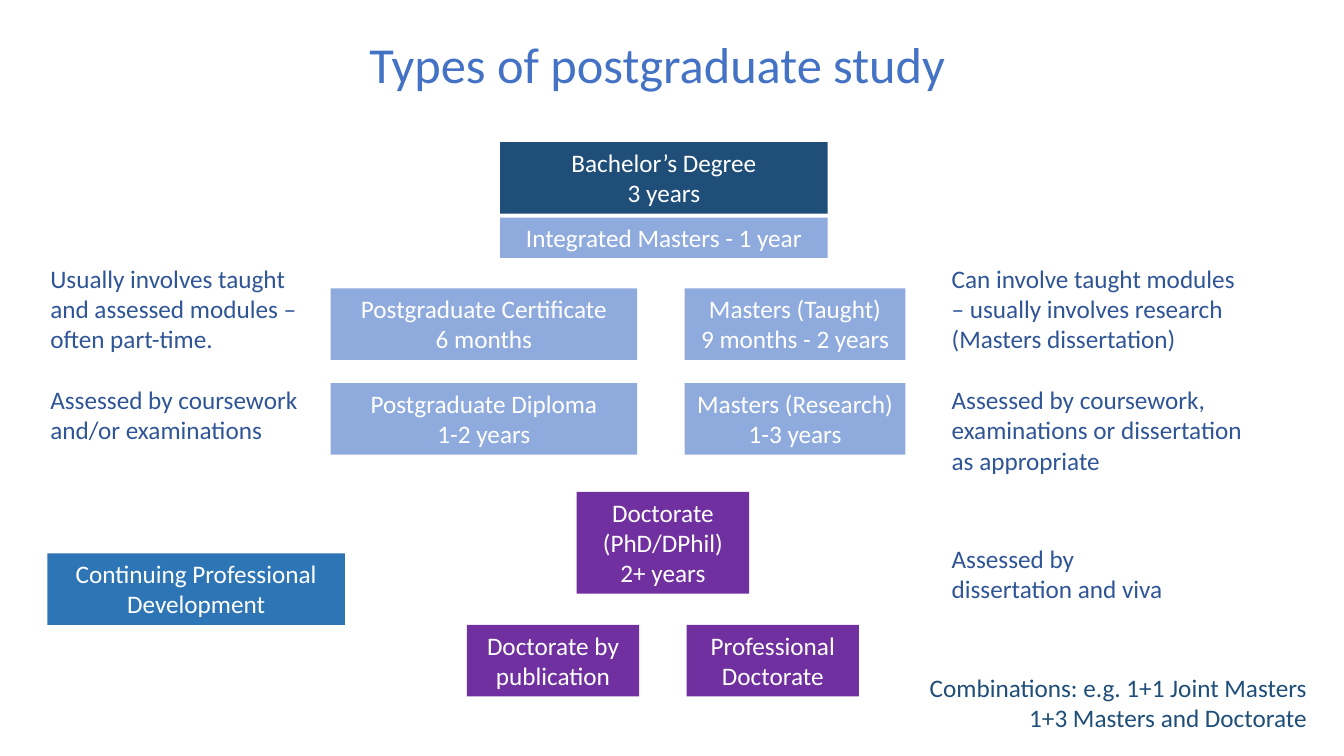
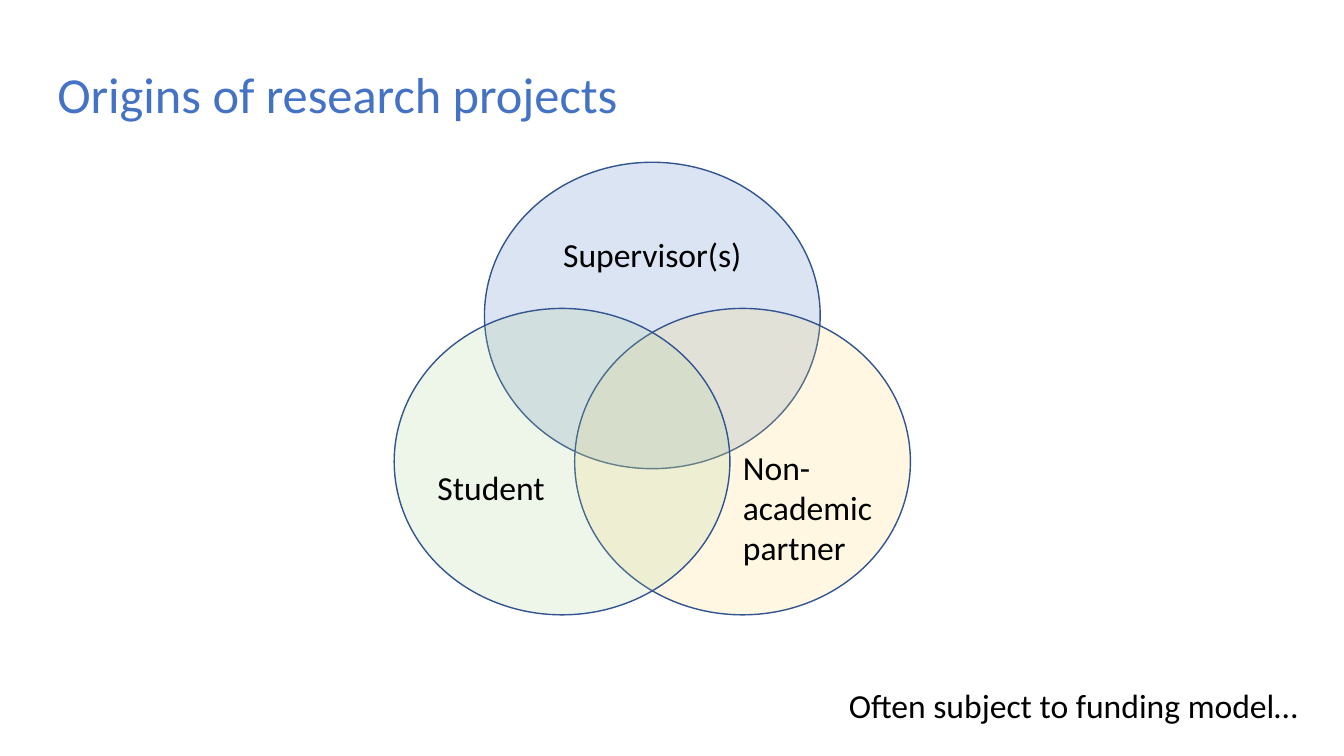
from collections import namedtuple

from lxml import etree
from pptx import Presentation
from pptx.dml.color import RGBColor
from pptx.enum.shapes import MSO_SHAPE
from pptx.enum.text import MSO_ANCHOR, PP_ALIGN
from pptx.oxml.ns import qn
from pptx.util import Inches, Pt

RECTANGLE, OVAL = MSO_SHAPE.RECTANGLE, MSO_SHAPE.OVAL
LEFT, CENTER, RIGHT = PP_ALIGN.LEFT, PP_ALIGN.CENTER, PP_ALIGN.RIGHT
TOP, MIDDLE = MSO_ANCHOR.TOP, MSO_ANCHOR.MIDDLE

FONT = "Calibri"
WHITE = RGBColor(0xFF, 0xFF, 0xFF)
BLACK = RGBColor(0x00, 0x00, 0x00)
TITLE_BLUE = RGBColor(0x44, 0x72, 0xC4)
NAVY = RGBColor(0x1F, 0x4E, 0x79)
NOTE_BLUE = RGBColor(0x2F, 0x55, 0x97)
MID_BLUE = RGBColor(0x2E, 0x75, 0xB6)
LIGHT_BLUE = RGBColor(0x8F, 0xAA, 0xDC)
PURPLE = RGBColor(0x70, 0x30, 0xA0)
YELLOW = RGBColor(0xFF, 0xD9, 0x66)
GREEN = RGBColor(0xA9, 0xD1, 0x8E)
OUTLINE = RGBColor(0x32, 0x54, 0x91)

SLIDE_WIDTH, SLIDE_HEIGHT = 13.33, 7.5
ROW = 0.71  # height of a two-line block

# left, top, width and height in inches
Box = namedtuple("Box", "left top width height")


def emu(box):
    return [Inches(length) for length in box]


def part(box, left, top, width, height):
    """Box placed by offsets from the corner of another box."""
    return Box(box.left + left, box.top + top, width, height)


def write(frame, paragraphs, size=18, color=BLACK, align=LEFT, anchor=TOP,
          gap=0, line_spacing=1.0):
    frame.word_wrap = True
    frame.vertical_anchor = anchor
    for index, text in enumerate(paragraphs):
        para = frame.paragraphs[0] if index == 0 else frame.add_paragraph()
        para.alignment = align
        para.line_spacing = line_spacing
        para.space_before = Pt(gap if index else 0)
        span = para.add_run()
        span.text = text
        span.font.name = FONT
        span.font.size = Pt(size)
        span.font.color.rgb = color


def add_text(page, box, *paragraphs, **style):
    write(page.shapes.add_textbox(*emu(box)).text_frame, paragraphs, **style)


def add_block(page, box, fill, *paragraphs):
    block = page.shapes.add_shape(RECTANGLE, *emu(box))
    block.shadow.inherit = False
    block.fill.solid()
    block.fill.fore_color.rgb = fill
    block.line.fill.background()
    write(block.text_frame, paragraphs, color=WHITE, align=CENTER)


def add_circle(page, box, fill, opacity=19):
    circle = page.shapes.add_shape(OVAL, *emu(box))
    circle.shadow.inherit = False
    circle.fill.solid()
    circle.fill.fore_color.rgb = fill
    tint = circle.element.spPr.find(qn("a:solidFill")).find(qn("a:srgbClr"))
    etree.SubElement(tint, qn("a:alpha")).set("val", str(opacity * 1000))
    circle.line.color.rgb = OUTLINE
    circle.line.width = Pt(1)


def add_title(page, left, top, text, align=LEFT):
    add_text(page, Box(left, top, 11.5, 1.45), text, size=36,
             color=TITLE_BLUE, align=align, anchor=MIDDLE, line_spacing=0.9)


def add_first_degree(page, box):
    add_block(page, part(box, 0, 0, box.width, ROW), NAVY,
              "Bachelor’s Degree", "3 years")
    add_block(page, part(box, 0, box.height - 0.4, box.width, 0.4), LIGHT_BLUE,
              "Integrated Masters - 1 year")


def add_masters_grid(page, box):
    columns = [
        (0, 3.04, [("Postgraduate Certificate", "6 months"),
                   ("Postgraduate Diploma", "1-2 years")]),
        (box.width - 2.19, 2.19, [("Masters (Taught)", "9 months - 2 years"),
                                  ("Masters (Research)", "1-3 years")]),
    ]
    for left, width, courses in columns:
        for row, course in enumerate(courses):
            cell = part(box, left, row * (box.height - ROW), width, ROW)
            add_block(page, cell, LIGHT_BLUE, *course)


def add_doctorates(page, box):
    width = 1.71
    spare = box.width - width
    add_block(page, part(box, spare / 2, 0, width, 1.01), PURPLE,
              "Doctorate (PhD/DPhil)", "2+ years")
    for left, text in ((0, "Doctorate by publication"),
                       (spare, "Professional Doctorate")):
        add_block(page, part(box, left, box.height - ROW, width, ROW),
                  PURPLE, text)


def add_venn(page, box):
    width, height = 3.33, 3.04
    right, low = box.width - width, box.height - height
    for left, top, fill in ((right / 2, 0, TITLE_BLUE),
                            (right, low, YELLOW),
                            (0, low, GREEN)):
        add_circle(page, part(box, left, top, width, height), fill)
    # Names of the three parties
    add_text(page, part(box, (box.width - 2.21) / 2, 0.66, 2.21, 0.5),
             "Supervisor(s)", size=24, align=CENTER)
    add_text(page, part(box, 0.33, 2.97, 1.35, 0.5), "Student", size=24)
    add_text(page, part(box, 3.36, 2.77, 1.57, 1.31),
             "Non-academic partner", size=24)


def build_study_types(page):
    add_title(page, 0.77, -0.06, "Types of postgraduate study", align=CENTER)
    # Qualifications, from first degree to doctorate
    add_first_degree(page, Box(4.96, 1.41, 3.25, 1.15))
    add_masters_grid(page, Box(3.28, 2.86, 5.7, 1.65))
    add_doctorates(page, Box(4.63, 4.88, 3.89, 2.03))
    add_block(page, Box(0.47, 5.49, 2.95, ROW), MID_BLUE,
              "Continuing Professional Development")
    # Notes at both sides
    note = {"color": NOTE_BLUE, "gap": 22}
    add_text(page, Box(0.4, 2.56, 2.65, 2.22),
             "Usually involves taught and assessed modules – often part-time.",
             "Assessed by coursework and/or examinations", **note)
    add_text(page, Box(9.34, 2.56, 3.11, 2.22),
             "Can involve taught modules – usually involves research "
             "(Masters dissertation)",
             "Assessed by coursework, examinations or dissertation "
             "as appropriate", **note)
    add_text(page, Box(9.34, 5.34, 2.65, ROW),
             "Assessed by dissertation and viva", **note)
    add_text(page, Box(8.78, 6.62, 4.28, ROW),
             "Combinations: e.g. 1+1 Joint Masters 1+3 Masters and Doctorate",
             color=NAVY, align=RIGHT)


def build_project_origins(page):
    add_title(page, 0.47, 0.24, "Origins of research projects")
    add_venn(page, Box(3.91, 1.61, 5.12, 4.49))
    # Closing remark
    add_text(page, Box(7.65, 6.75, 5.32, 0.5),
             "Often subject to funding model…", size=24, align=RIGHT)


def main():
    deck = Presentation()
    deck.slide_width = Inches(SLIDE_WIDTH)
    deck.slide_height = Inches(SLIDE_HEIGHT)
    blank = deck.slide_layouts[6]
    for build in (build_study_types, build_project_origins):
        build(deck.slides.add_slide(blank))
    deck.save("out.pptx")


if __name__ == "__main__":
    main()
